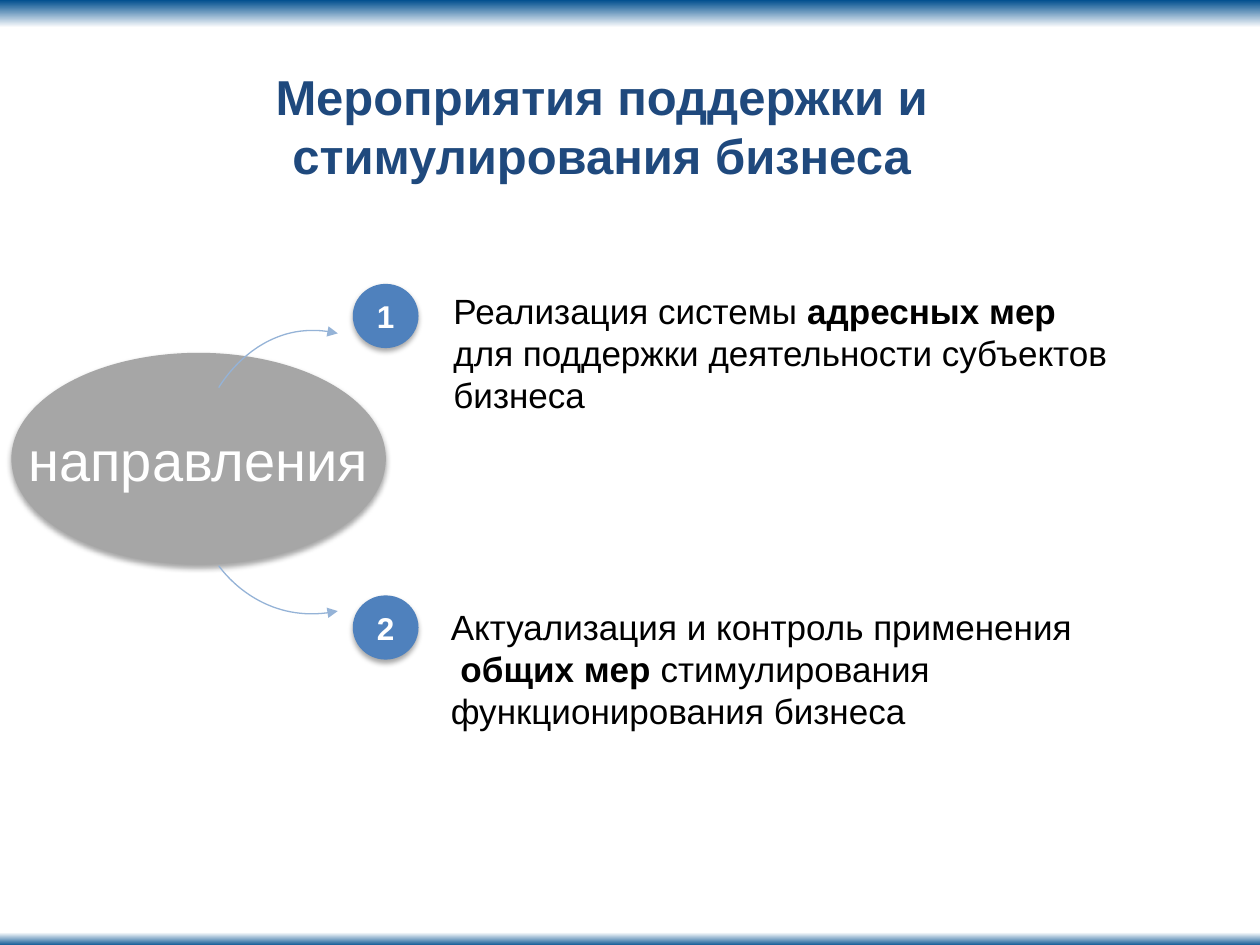
from typing import NamedTuple

from lxml.etree import SubElement
from pptx import Presentation
from pptx.dml.color import RGBColor
from pptx.enum.shapes import MSO_SHAPE as Shape
from pptx.enum.text import MSO_ANCHOR as Anchor, MSO_AUTO_SIZE as AutoSize, PP_ALIGN as Align
from pptx.oxml.ns import qn
from pptx.util import Pt

COLORS = {"band": "004E8E", "white": "FFFFFF", "badge": "4F81BD", "hub": "A6A6A6",
          "arrow": "95B3D7", "title": "1F497D", "text": "000000", "shadow": "000000"}
FONT = "Arial"
WIDTH, HEIGHT = 720, 540


class Run(NamedTuple):
    text: str
    bold: bool = False


class Band(NamedTuple):
    top: float
    height: float
    upper: str
    lower: str


class Oval(NamedTuple):
    text: str
    box: tuple[float, float, float, float]
    fill: str
    size: float
    bold: bool = False


class Direction(NamedTuple):
    box: tuple[float, float, float, float]
    paragraphs: list[list[Run]]


class Curve(NamedTuple):
    """Cubic Bezier points, from the arrow tip back to the hub."""
    points: list[tuple[float, float]]


BANDS = [Band(0, 15.8, "band", "white"), Band(532.8, 8, "white", "band")]
OVALS = [
    Oval("направления", (6.5, 201.6, 214, 121), "hub", 32),
    Oval("1", (201.6, 162.2, 37.6, 36.7), "badge", 18, True),
    Oval("2", (201.6, 340.2, 37.6, 36.7), "badge", 18, True),
]
DIRECTIONS = [
    Direction((252, 162, 466, 80), [
        [Run("Реализация системы "), Run("адресных мер", True)],
        [Run("для поддержки деятельности субъектов бизнеса")]]),
    Direction((250.5, 342.7, 469.5, 80), [
        [Run("Актуализация и контроль применения")],
        [Run(" "), Run("общих мер ", True),
         Run("стимулирования функционирования бизнеса")]]),
]
CURVES = [
    Curve([(193, 190.5), (148.3, 180), (125, 221.5), (125, 221.5)]),
    Curve([(193, 349.2), (148.3, 358.6), (125, 323.3), (125, 323.3)]),
]


def rgb(name: str) -> RGBColor:
    return RGBColor.from_string(COLORS[name])


def add_run(p, run: Run, size: float, color: str) -> None:
    r = p.add_run()
    r.text = run.text
    r.font.name, r.font.size, r.font.bold = FONT, Pt(size), run.bold
    r.font.color.rgb = rgb(color)


def draw_band(s, band: Band) -> None:
    sp = s.shapes.add_shape(Shape.RECTANGLE, 0, Pt(band.top), Pt(WIDTH), Pt(band.height))
    sp.shadow.inherit = False
    sp.line.fill.background()
    sp.fill.gradient()
    sp.fill.gradient_angle = 270
    for stop, color in zip(sp.fill.gradient_stops, (band.upper, band.lower)):
        stop.color.rgb = rgb(color)


def add_soft_shadow(sp) -> None:
    sp.shadow.inherit = False
    effects = sp.element.spPr.find(qn("a:effectLst"))
    shadow = SubElement(effects, qn("a:outerShdw"), blurRad=str(Pt(3.1)),
                        dist=str(Pt(1.8)), dir="5400000", rotWithShape="0")
    color = SubElement(shadow, qn("a:srgbClr"), val=COLORS["shadow"])
    SubElement(color, qn("a:alpha"), val="35000")


def draw_oval(s, oval: Oval) -> None:
    sp = s.shapes.add_shape(Shape.OVAL, *map(Pt, oval.box))
    sp.fill.solid()
    sp.fill.fore_color.rgb = rgb(oval.fill)
    sp.line.fill.background()
    add_soft_shadow(sp)
    tf = sp.text_frame
    tf.margin_left = tf.margin_right = tf.margin_top = tf.margin_bottom = 0
    tf.word_wrap = False
    tf.vertical_anchor = Anchor.MIDDLE
    p = tf.paragraphs[0]
    p.alignment = Align.CENTER
    add_run(p, Run(oval.text, oval.bold), oval.size, "white")


def draw_direction(s, direction: Direction) -> None:
    tf = s.shapes.add_textbox(*map(Pt, direction.box)).text_frame
    tf.word_wrap = True
    for i, runs in enumerate(direction.paragraphs):
        p = tf.add_paragraph() if i else tf.paragraphs[0]
        for run in runs:
            add_run(p, run, 20, "text")


def bezier(points: list[tuple[float, float]], t: float) -> tuple[int, int]:
    weights = ((1 - t) ** 3, 3 * t * (1 - t) ** 2, 3 * t ** 2 * (1 - t), t ** 3)
    x, y = (sum(w * c for w, c in zip(weights, axis)) for axis in zip(*points))
    return Pt(x), Pt(y)


def draw_curve(s, curve: Curve, steps: int = 40) -> None:
    start, *rest = [bezier(curve.points, i / steps) for i in range(steps + 1)]
    builder = s.shapes.build_freeform(*start)
    builder.add_line_segments(rest, close=False)
    sp = builder.convert_to_shape()
    sp.shadow.inherit = False
    sp.fill.background()
    sp.line.color.rgb = rgb("arrow")
    sp.line.width = Pt(0.75)
    SubElement(sp.element.spPr.find(qn("a:ln")), qn("a:headEnd"), type="triangle")


def draw_title(s, text: str) -> None:
    sp = s.shapes.title
    sp.left, sp.top, sp.width, sp.height = map(Pt, (54, 34.5, 579.6, 75))
    tf = sp.text_frame
    tf.word_wrap = True
    tf.auto_size = AutoSize.NONE
    tf.vertical_anchor = Anchor.TOP
    p = tf.paragraphs[0]
    p.alignment = Align.CENTER
    add_run(p, Run(text, True), 28, "title")


def main() -> None:
    prs = Presentation()
    prs.slide_width, prs.slide_height = Pt(WIDTH), Pt(HEIGHT)
    s = prs.slides.add_slide(prs.slide_layouts[5])

    # Edge bands and title
    for band in BANDS:
        draw_band(s, band)
    draw_title(s, "Мероприятия поддержки и стимулирования бизнеса")

    # Hub and numbered badges, with their descriptions
    for oval in OVALS:
        draw_oval(s, oval)
    for direction in DIRECTIONS:
        draw_direction(s, direction)

    # Curved arrows from the hub to the badges
    for curve in CURVES:
        draw_curve(s, curve)

    prs.save("out.pptx")


if __name__ == "__main__":
    main()
